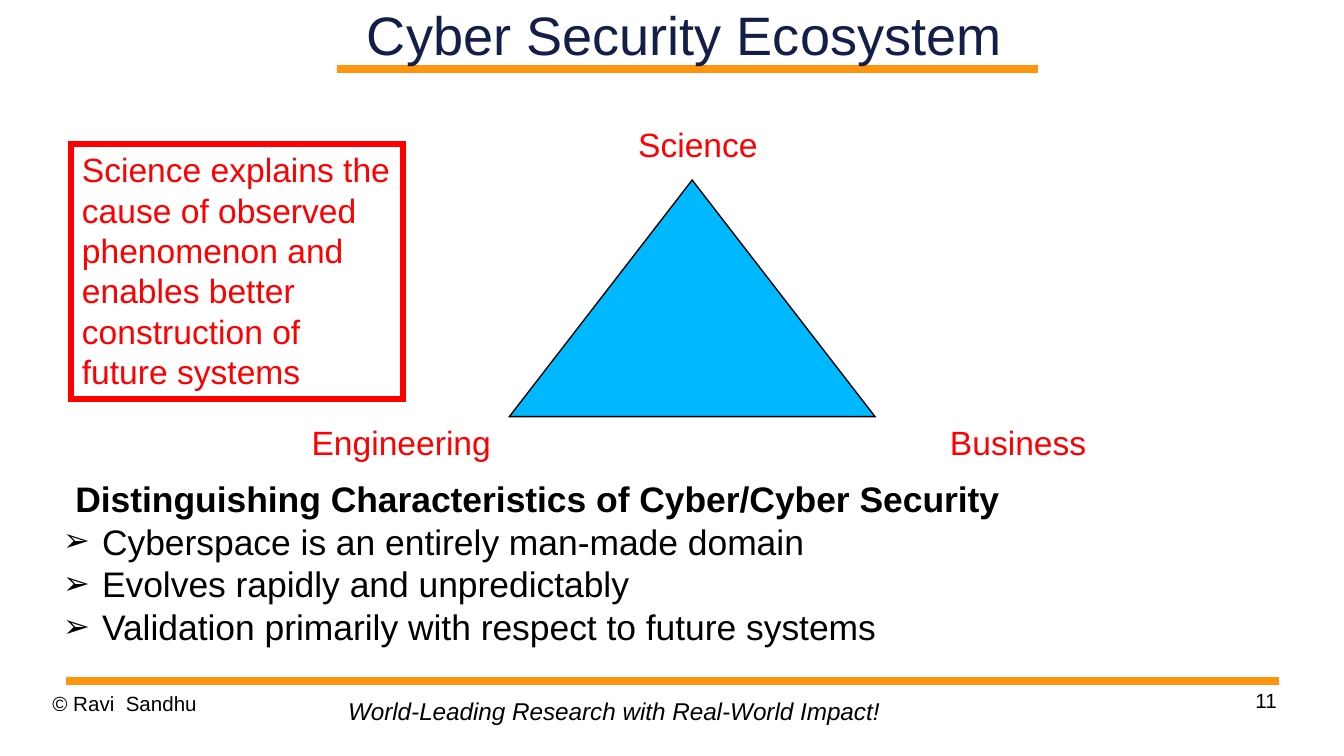
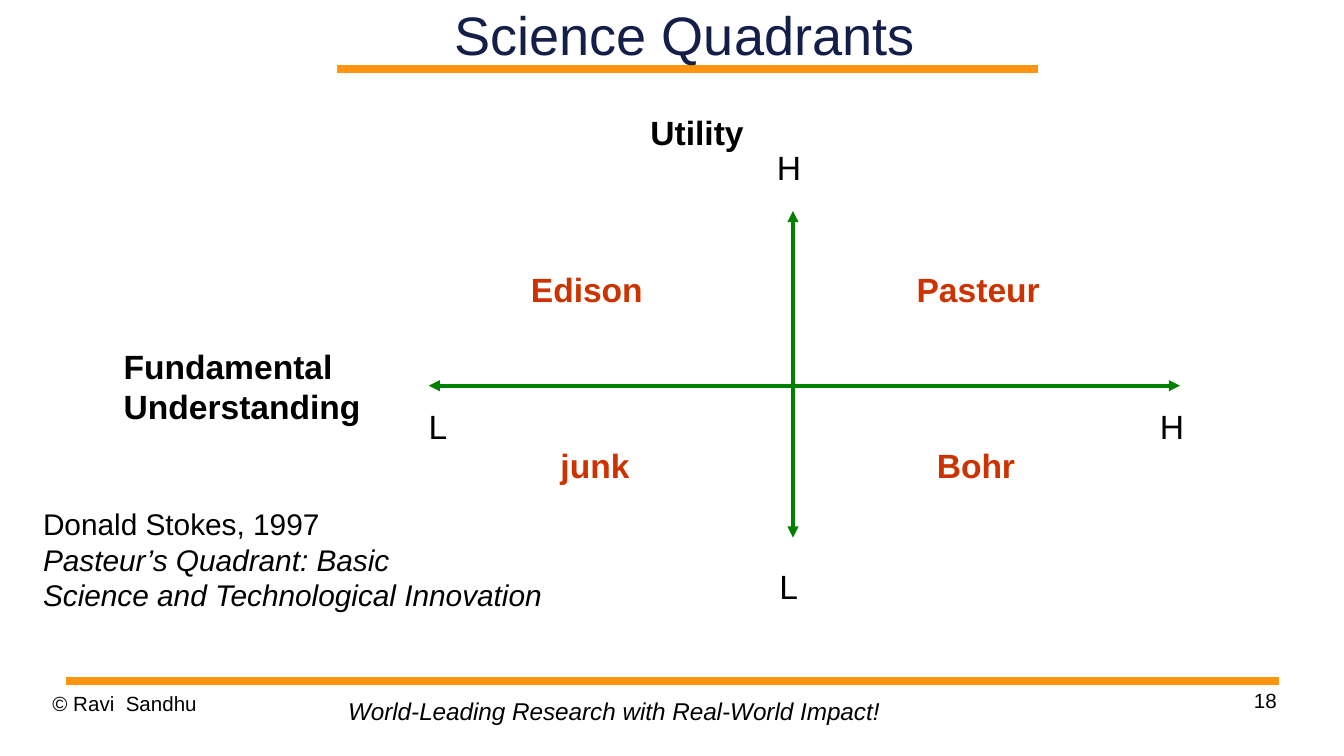
from dataclasses import dataclass

from lxml import etree
from pptx import Presentation
from pptx.dml.color import RGBColor
from pptx.enum.shapes import MSO_CONNECTOR, MSO_SHAPE
from pptx.enum.text import MSO_ANCHOR, MSO_AUTO_SIZE, PP_ALIGN
from pptx.oxml.ns import qn
from pptx.util import Inches, Pt

STRAIGHT = MSO_CONNECTOR.STRAIGHT
TRIANGLE, RECTANGLE = MSO_SHAPE.ISOSCELES_TRIANGLE, MSO_SHAPE.RECTANGLE
TOP, MIDDLE = MSO_ANCHOR.TOP, MSO_ANCHOR.MIDDLE
FIT, FIXED = MSO_AUTO_SIZE.SHAPE_TO_FIT_TEXT, MSO_AUTO_SIZE.NONE
LEFT, CENTER, RIGHT = PP_ALIGN.LEFT, PP_ALIGN.CENTER, PP_ALIGN.RIGHT

FONT = "Arial"
COLORS = {
    "title": "131F49",
    "band": "FF950E",
    "text": "000000",
    "red": "FF0000",
    "triangle": "00B8FF",
    "axis": "008000",
    "quadrant": "CC3300",
}
NO_INSET, SMALL_INSET, WIDE_INSET = (0, 0), (0.08, 0.04), (0.1, 0.05)


@dataclass
class Para:
    text: str
    size: float = 18
    color: str = "text"
    bold: bool = False
    italic: bool = False
    align: PP_ALIGN = LEFT
    indent: float = 0
    bullet: str = ""
    spacing: float = 1.0


@dataclass
class Label:
    left: float
    top: float
    width: float
    height: float
    paras: list[Para]
    inset: tuple[float, float] = SMALL_INSET
    wrap: bool = False
    fit: bool = True


@dataclass
class Rule:
    x1: float
    y1: float
    x2: float
    y2: float
    color: str
    weight: float
    arrows: bool = False


def rgb(name: str) -> RGBColor:
    return RGBColor.from_string(COLORS[name])


def add_bullet(p, para: Para) -> None:
    p_pr = p._p.get_or_add_pPr()
    p_pr.set("indent", str(Inches(-0.29)))
    color = etree.SubElement(p_pr, qn("a:buClr"))
    etree.SubElement(color, qn("a:srgbClr"), val=COLORS[para.color])
    etree.SubElement(p_pr, qn("a:buSzPct"), val="90000")
    etree.SubElement(p_pr, qn("a:buFont"), typeface=FONT)
    etree.SubElement(p_pr, qn("a:buChar"), char=para.bullet)


def write_text(tf, paras: list[Para], inset: tuple[float, float],
               wrap: bool = True, fit: bool = False, anchor=TOP) -> None:
    tf.margin_left = tf.margin_right = Inches(inset[0])
    tf.margin_top = tf.margin_bottom = Inches(inset[1])
    tf.word_wrap = wrap
    tf.auto_size = FIT if fit else FIXED
    tf.vertical_anchor = anchor
    for i, para in enumerate(paras):
        p = tf.add_paragraph() if i else tf.paragraphs[0]
        if para.indent:
            p._p.get_or_add_pPr().set("marL", str(Inches(para.indent)))
        if para.bullet:
            add_bullet(p, para)
        p.alignment = para.align
        p.line_spacing = para.spacing
        r = p.add_run()
        r.text = para.text
        r.font.name = FONT
        r.font.size = Pt(para.size)
        r.font.bold = para.bold
        r.font.italic = para.italic
        r.font.color.rgb = rgb(para.color)


def draw_label(s, label: Label) -> None:
    sp = s.shapes.add_textbox(Inches(label.left), Inches(label.top),
                              Inches(label.width), Inches(label.height))
    write_text(sp.text_frame, label.paras, label.inset, label.wrap, label.fit)


def draw_rule(s, rule: Rule) -> None:
    line = s.shapes.add_connector(STRAIGHT, Inches(rule.x1), Inches(rule.y1),
                                  Inches(rule.x2), Inches(rule.y2))
    line.line.color.rgb = rgb(rule.color)
    line.line.width = Pt(rule.weight)
    if rule.arrows:
        ln = line.line._get_or_add_ln()
        for end in ("a:headEnd", "a:tailEnd"):
            etree.SubElement(ln, qn(end), type="triangle")
    etree.SubElement(line._element.spPr, qn("a:effectLst"))


def draw_shape(s, kind, left: float, top: float, width: float, height: float,
               line: str, weight: float, fill: str = ""):
    sp = s.shapes.add_shape(kind, Inches(left), Inches(top),
                            Inches(width), Inches(height))
    sp.shadow.inherit = False
    if fill:
        sp.fill.solid()
        sp.fill.fore_color.rgb = rgb(fill)
    else:
        sp.fill.background()
    sp.line.color.rgb = rgb(line)
    sp.line.width = Pt(weight)
    etree.SubElement(sp.line._get_or_add_ln(), qn("a:miter"), lim="800000")
    return sp


# Shared frame: title, orange bands and footer
BANDS = [Rule(2.51, 0.51, 7.72, 0.51, "band", 4.31),
         Rule(0.49, 5.07, 9.52, 5.07, "band", 4.31)]


def footer(number: int) -> list[Label]:
    return [
        Label(0.39, 5.14, 2.33, 0.39,
              [Para("© Ravi  Sandhu", 11, spacing=1.01)],
              NO_INSET, wrap=True, fit=False),
        Label(7.17, 5.12, 2.33, 0.39,
              [Para(str(number), 11, align=RIGHT, spacing=1.01)],
              NO_INSET, wrap=True, fit=False),
        Label(2.51, 5.14, 4.17, 0.3,
              [Para("World-Leading Research with Real-World Impact!", 13,
                    italic=True)]),
    ]


def new_slide(prs, title: str, number: int):
    s = prs.slides.add_slide(prs.slide_layouts[5])
    for band in BANDS:
        draw_rule(s, band)
    for label in footer(number):
        draw_label(s, label)
    sp = s.shapes.title
    sp.left, sp.top = Inches(2.18), Inches(0)
    sp.width, sp.height = Inches(5.83), Inches(0.51)
    write_text(sp.text_frame, [Para(title, 29, "title", align=CENTER)],
               NO_INSET, anchor=MIDDLE)
    # The title lies over the band
    s.shapes._spTree.append(sp._element)
    return s


def ecosystem_slide(prs) -> None:
    s = new_slide(prs, "Cyber Security Ecosystem", 11)

    # Triangle and its corners
    draw_shape(s, TRIANGLE, 3.79, 1.34, 2.72, 1.76, "text", 0.75, "triangle")
    for text, left, top, width in [("Science", 4.65, 0.87, 1.1),
                                   ("Engineering", 2.22, 3.09, 1.55),
                                   ("Business", 6.97, 3.09, 1.23)]:
        draw_label(s, Label(left, top, width, 0.4,
                            [Para(text, color="red")], WIDE_INSET))

    # Characteristics
    heading = Para("Distinguishing Characteristics of Cyber/Cyber Security",
                   19, bold=True, align=CENTER, indent=0.1)
    points = [Para(text, 19, indent=0.38, bullet="➢") for text in (
        "Cyberspace is an entirely man-made domain",
        "Evolves rapidly and unpredictably",
        "Validation primarily with respect to future systems")]
    draw_label(s, Label(0.38, 3.55, 7.14, 1.68, [heading, *points],
                        NO_INSET, wrap=True, fit=False))

    # Callout
    callout = draw_shape(s, RECTANGLE, 0.53, 1.07, 2.47, 1.9, "red", 3)
    write_text(callout.text_frame, [Para(
        "Science explains the cause of observed phenomenon and enables "
        "better construction of future systems", color="red")],
        SMALL_INSET, fit=True)


def quadrants_slide(prs) -> None:
    s = new_slide(prs, "Science Quadrants", 18)

    # Axes
    draw_rule(s, Rule(3.19, 2.87, 8.78, 2.87, "axis", 2, arrows=True))
    draw_rule(s, Rule(5.9, 1.57, 5.9, 4, "axis", 2, arrows=True))

    # Axis names and ends
    draw_label(s, Label(0.84, 2.53, 1.94, 0.69,
                        [Para("Fundamental", bold=True),
                         Para("Understanding", bold=True)]))
    draw_label(s, Label(4.76, 0.79, 0.86, 0.38, [Para("Utility", bold=True)]))
    for text, left, top, width in [("L", 3.11, 2.98, 0.3),
                                   ("H", 8.55, 2.98, 0.35),
                                   ("H", 5.7, 1.05, 0.35),
                                   ("L", 5.72, 4.17, 0.3)]:
        draw_label(s, Label(left, top, width, 0.38, [Para(text)]))

    # Quadrants
    for text, left, top, width in [("Edison", 3.87, 1.96, 1.01),
                                   ("Pasteur", 6.74, 1.96, 1.09),
                                   ("Bohr", 6.89, 3.27, 0.75),
                                   ("junk", 4.09, 3.27, 0.68)]:
        draw_label(s, Label(left, top, width, 0.38,
                            [Para(text, color="quadrant", bold=True)]))

    # Reference
    draw_label(s, Label(0.24, 3.72, 3.92, 0.89, [
        Para("Donald Stokes, 1997", 16),
        Para("Pasteur’s Quadrant: Basic", 16, italic=True),
        Para("Science and Technological Innovation", 16, italic=True)]))


def main() -> None:
    prs = Presentation()
    # Widescreen, 16:9
    prs.slide_width = Inches(10)
    prs.slide_height = Inches(10 * 9 / 16)
    ecosystem_slide(prs)
    quadrants_slide(prs)
    prs.save("out.pptx")


if __name__ == "__main__":
    main()
